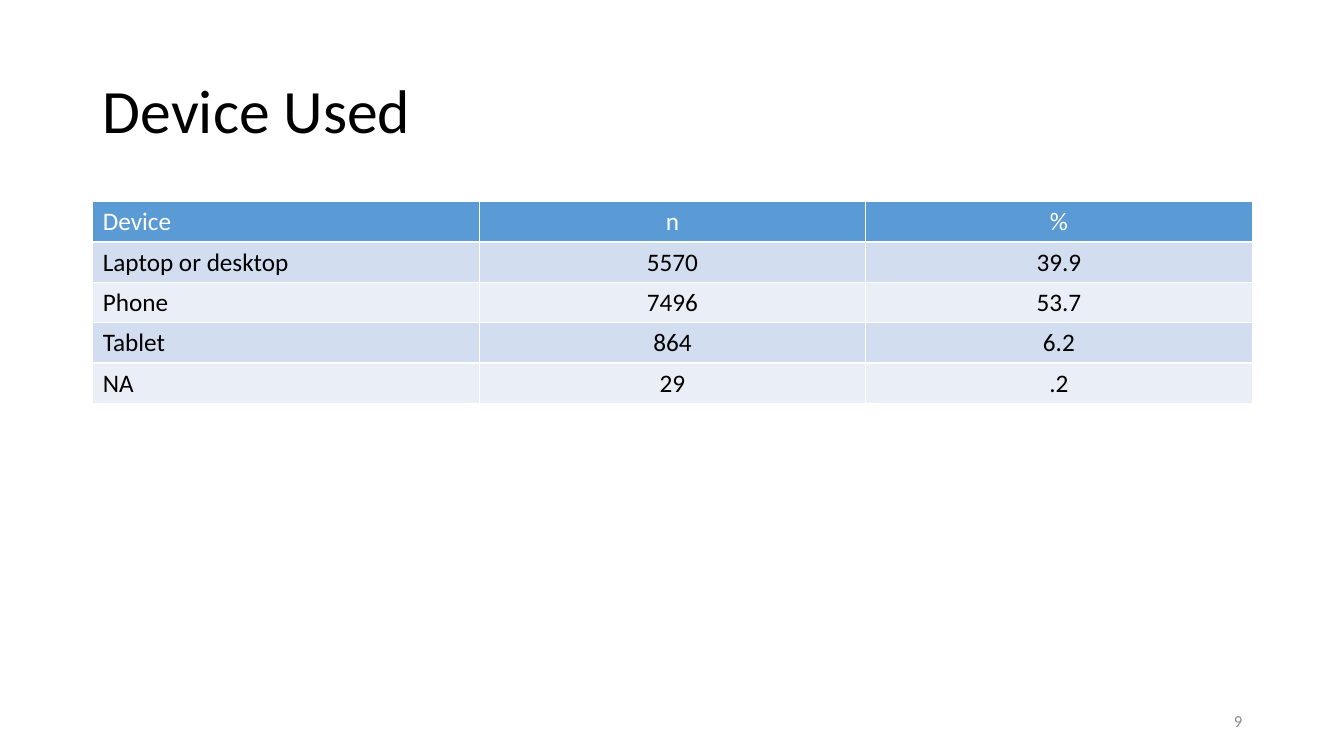
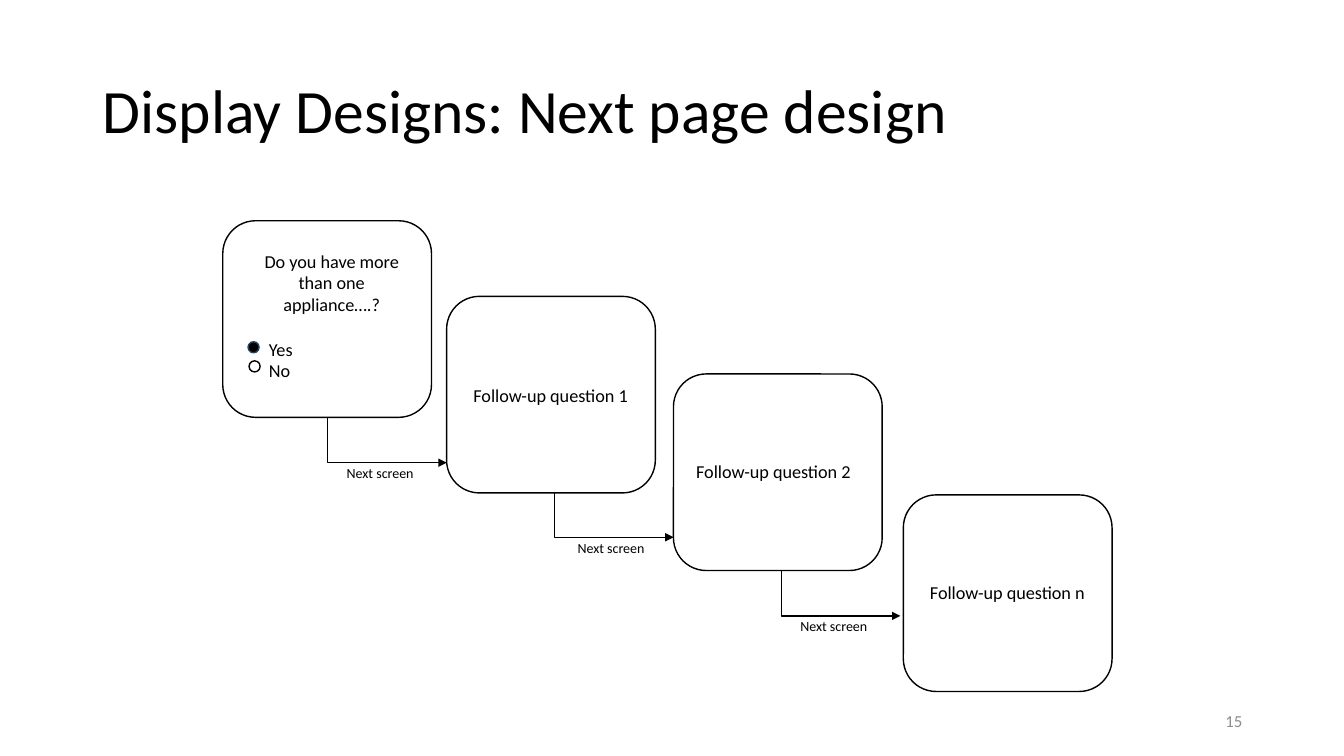
"""Build two survey slides: a device table and a next-page display design."""
from lxml.etree import SubElement
from pptx import Presentation
from pptx.dml.color import RGBColor
from pptx.enum.shapes import MSO_CONNECTOR, MSO_SHAPE
from pptx.enum.text import MSO_ANCHOR, PP_ALIGN
from pptx.oxml.ns import qn
from pptx.util import Inches, Pt

COLORS = {
    "text": "000000",
    "line": "000000",
    "number": "8C8C8C",
    "radio": "28445D",
    "white": "FFFFFF",
    "header": "5B9BD5",
    "band_dark": "D2DEEF",
    "band_light": "EAEFF7",
}
FONT = "Calibri"
TITLE_ONLY = 5


def rgb(name):
    return RGBColor.from_string(COLORS[name])


class Deck:
    def __init__(self):
        self.prs = Presentation()
        self.prs.slide_width = Inches(13.33)
        self.prs.slide_height = Inches(7.5)
        self.s = None

    def style(self, p, size, color="text", align=PP_ALIGN.LEFT):
        p.alignment = align
        for r in p.runs:
            r.font.name = FONT
            r.font.size = Pt(size)
            r.font.bold = False
            r.font.color.rgb = rgb(color)

    def slide(self, title, number):
        self.s = self.prs.slides.add_slide(self.prs.slide_layouts[TITLE_ONLY])
        sp = self.s.shapes.title
        sp.left, sp.top = Inches(0.92), Inches(0.4)
        sp.width, sp.height = Inches(11.5), Inches(1.45)
        tf = sp.text_frame
        tf.text = title
        tf.vertical_anchor = MSO_ANCHOR.MIDDLE
        p = tf.paragraphs[0]
        p.line_spacing = 0.9
        self.style(p, 44)
        self.text(str(number), 9.42, 6.95, 3, 0.4, 12, "number",
                  PP_ALIGN.RIGHT, MSO_ANCHOR.MIDDLE)

    def text(self, text, x, y, w, h, size, color="text",
             align=PP_ALIGN.LEFT, anchor=MSO_ANCHOR.TOP):
        sp = self.s.shapes.add_textbox(Inches(x), Inches(y), Inches(w), Inches(h))
        tf = sp.text_frame
        tf.word_wrap = True
        tf.vertical_anchor = anchor
        tf.text = text
        self.style(tf.paragraphs[0], size, color, align)
        return tf

    def options(self, tf, names, size, indent, gap):
        for i, name in enumerate(names):
            p = tf.add_paragraph()
            p.text = name
            p._p.get_or_add_pPr().set("marL", str(Inches(indent)))
            p.space_before = Pt(0 if i else gap)
            self.style(p, size)

    def shape(self, kind, x, y, w, h, fill=None, line="line"):
        sp = self.s.shapes.add_shape(kind, Inches(x), Inches(y), Inches(w), Inches(h))
        sp.shadow.inherit = False
        if fill:
            sp.fill.solid()
            sp.fill.fore_color.rgb = rgb(fill)
        else:
            sp.fill.background()
        sp.line.color.rgb = rgb(line)
        sp.line.width = Pt(1)

    def arrow(self, x, y, across, down):
        cx, cy = x + across / 2, y + down / 2
        c = self.s.shapes.add_connector(
            MSO_CONNECTOR.ELBOW,
            Inches(cx + down / 2), Inches(cy - across / 2),
            Inches(cx - down / 2), Inches(cy + across / 2))
        c.line.color.rgb = rgb("line")
        c.line.width = Pt(1)
        pr = c._element.spPr
        pr.find(qn("a:xfrm")).set("rot", str(270 * 60000))
        pr.find(qn("a:prstGeom")).set("prst", "bentConnector2")
        SubElement(pr.find(qn("a:ln")), qn("a:tailEnd"), type="triangle")
        SubElement(pr, qn("a:effectLst"))

    def borders(self, cell):
        tc = cell._tc.get_or_add_tcPr()
        for side in ("lnL", "lnR", "lnT", "lnB"):
            ln = SubElement(tc, qn(f"a:{side}"), w=str(Pt(1)))
            fill = SubElement(ln, qn("a:solidFill"))
            SubElement(fill, qn("a:srgbClr"), val=COLORS["white"])

    def table(self, rows, x, y, w, row_h):
        n = len(rows[0])
        table = self.s.shapes.add_table(
            len(rows), n, Inches(x), Inches(y), Inches(w),
            Inches(row_h * len(rows))).table
        for col in table.columns:
            col.width = Inches(w / n)
        for i, row in enumerate(rows):
            band = "band_dark" if i % 2 else "band_light"
            for j, value in enumerate(row):
                cell = table.cell(i, j)
                self.borders(cell)
                cell.fill.solid()
                cell.fill.fore_color.rgb = rgb(band if i else "header")
                cell.text_frame.text = value
                self.style(cell.text_frame.paragraphs[0], 18,
                           "text" if i else "white",
                           PP_ALIGN.CENTER if j else PP_ALIGN.LEFT)


def device_slide(deck):
    deck.slide("Device Used", 9)
    deck.table([
        ("Device", "n", "%"),
        ("Laptop or desktop", "5570", "39.9"),
        ("Phone", "7496", "53.7"),
        ("Tablet", "864", "6.2"),
        ("NA", "29", ".2"),
    ], 0.92, 2, 11.5, 0.4)


def design_slide(deck):
    deck.slide("Display Designs: Next page design", 15)
    for x, y in ((2.21, 2.19), (4.43, 2.94), (6.68, 3.71), (8.96, 4.91)):
        deck.shape(MSO_SHAPE.ROUNDED_RECTANGLE, x, y, 2.07, 1.95)

    tf = deck.text("Do you have more than one appliance….?",
                   2.41, 2.43, 1.76, 1.41, 13, align=PP_ALIGN.CENTER)
    deck.options(tf, ("Yes", "No"), 13, 0.16, 16)
    deck.shape(MSO_SHAPE.OVAL, 2.46, 3.39, 0.11, 0.11, "text", "radio")
    deck.shape(MSO_SHAPE.OVAL, 2.47, 3.58, 0.11, 0.11)

    for name, x, y in (("1", 4.52, 3.76), ("2", 6.73, 4.52), ("n", 9.05, 5.72)):
        deck.text(f"Follow-up question {name}", x, y, 1.88, 0.32, 13,
                  align=PP_ALIGN.CENTER)

    for x, y, label_x in ((3.25, 4.14, 3.34), (5.5, 4.88, 5.63), (7.75, 5.66, 7.84)):
        deck.arrow(x, y, 1.18, 0.45)
        deck.text("Next screen", label_x, y + 0.42, 1, 0.27, 10)


def main():
    deck = Deck()
    device_slide(deck)
    design_slide(deck)
    deck.prs.save("out.pptx")


if __name__ == "__main__":
    main()
